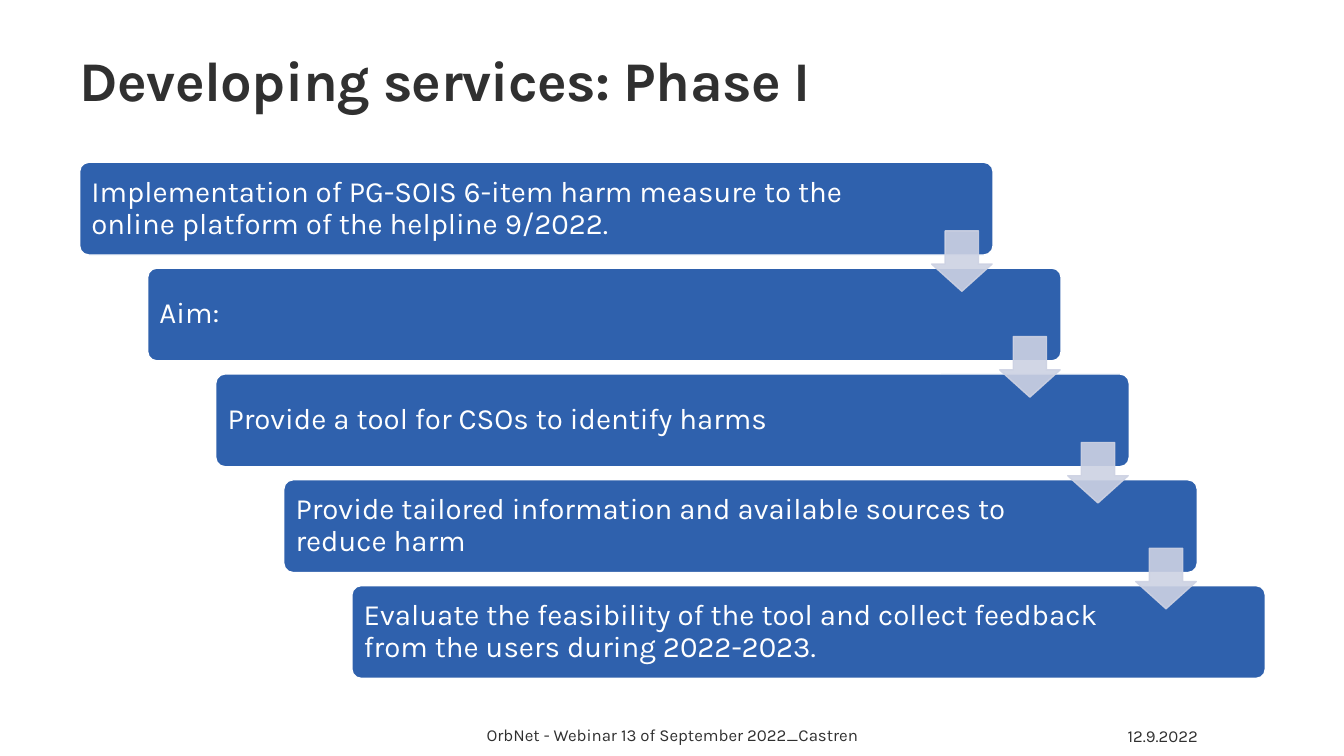
"""Build the slide on the five steps of Phase I service development."""
from lxml import etree
from pptx import Presentation
from pptx.dml.color import RGBColor
from pptx.enum.shapes import MSO_SHAPE
from pptx.enum.text import MSO_ANCHOR, MSO_AUTO_SIZE, PP_ALIGN
from pptx.oxml.ns import qn
from pptx.util import Inches, Pt

ROUNDED, DOWN_ARROW = MSO_SHAPE.ROUNDED_RECTANGLE, MSO_SHAPE.DOWN_ARROW
MIDDLE = MSO_ANCHOR.MIDDLE
LEFT, CENTER, RIGHT = PP_ALIGN.LEFT, PP_ALIGN.CENTER, PP_ALIGN.RIGHT

TITLE = "Developing services: Phase I"
STEPS = [
    "Implementation of PG-SOIS 6-item harm measure to the online platform of the helpline 9/2022.",
    "Aim:",
    "Provide a tool for CSOs to identify harms",
    "Provide tailored information and available sources to reduce harm",
    "Evaluate the feasibility of the tool and collect feedback from the users during 2022-2023.",
]
FOOTERS = [
    ("12.9.2022", RIGHT, (10.8, 7.09, 1.18, 0.42)),
    ("OrbNet - Webinar 13 of September 2022_Castren", CENTER, (2.87, 7.09, 7.6, 0.4)),
]
FONT, DARK, WHITE, BLUE, PALE = "Karla", "303030", "FFFFFF", "2F61AD", "CDD2E3"
STEP_LEFT, STEP_TOP, STEP_WIDTH, STEP_HEIGHT = 0.79, 1.61, 9.06, 0.92
SHIFT_X, SHIFT_Y = 0.675, 1.05
ARROW_LEFT, ARROW_TOP, ARROW_SIZE = 9.24, 2.29, 0.6


def color(value):
    return RGBColor.from_string(value)


def write(shape, text, size, font_color, align, insets, spacing=1.0, bold=False):
    frame = shape.text_frame
    frame.word_wrap = True
    frame.auto_size = MSO_AUTO_SIZE.NONE
    frame.vertical_anchor = MIDDLE
    frame.margin_left, frame.margin_top, frame.margin_right, frame.margin_bottom = map(Inches, insets)
    frame.text = text
    para = frame.paragraphs[0]
    para.alignment = align
    para.line_spacing = spacing
    font = para.font
    font.name, font.size, font.bold = FONT, Pt(size), bold
    font.color.rgb = color(font_color)
    return para


def add_filled(page, kind, area, adjustments, fill, line):
    shape = page.shapes.add_shape(kind, *map(Inches, area))
    shape.shadow.inherit = False
    for index, value in enumerate(adjustments):
        shape.adjustments[index] = value
    shape.fill.solid()
    shape.fill.fore_color.rgb = color(fill)
    shape.line.color.rgb = color(line)
    shape.line.width = Pt(1)
    return shape


def add_title(page):
    title = page.shapes.title
    title.left, title.top, title.width, title.height = map(Inches, (0.79, 0.2, 11.76, 1.3))
    para = write(title, TITLE, 40, DARK, LEFT, (0, 0.04, 0.08, 0.04), 0.8, True)
    para.runs[0].font._element.set("spc", "-40")


def add_steps(page):
    for index, text in enumerate(STEPS):
        area = (STEP_LEFT + index * SHIFT_X, STEP_TOP + index * SHIFT_Y, STEP_WIDTH, STEP_HEIGHT)
        step = add_filled(page, ROUNDED, area, [0.1], BLUE, WHITE)
        write(step, text, 21, WHITE, LEFT, (0.09, 0.09, 1.3, 0.09), 0.9)


def add_arrows(page):
    for index in range(len(STEPS) - 1):
        area = (ARROW_LEFT + index * SHIFT_X, ARROW_TOP + index * SHIFT_Y, ARROW_SIZE, ARROW_SIZE)
        arrow = add_filled(page, DOWN_ARROW, area, [0.55, 0.45], PALE, PALE)
        for tint in arrow._element.spPr.iter(qn("a:srgbClr")):
            etree.SubElement(tint, qn("a:alpha")).set("val", "90000")


def main():
    deck = Presentation()
    deck.slide_width, deck.slide_height = Inches(13.33), Inches(7.5)
    page = deck.slides.add_slide(deck.slide_layouts[5])
    add_title(page)
    for text, align, area in FOOTERS:
        box = page.shapes.add_textbox(*map(Inches, area))
        write(box, text, 12, DARK, align, (0.1, 0.05, 0.1, 0.05))
    add_steps(page)
    add_arrows(page)
    deck.save("out.pptx")


if __name__ == "__main__":
    main()
